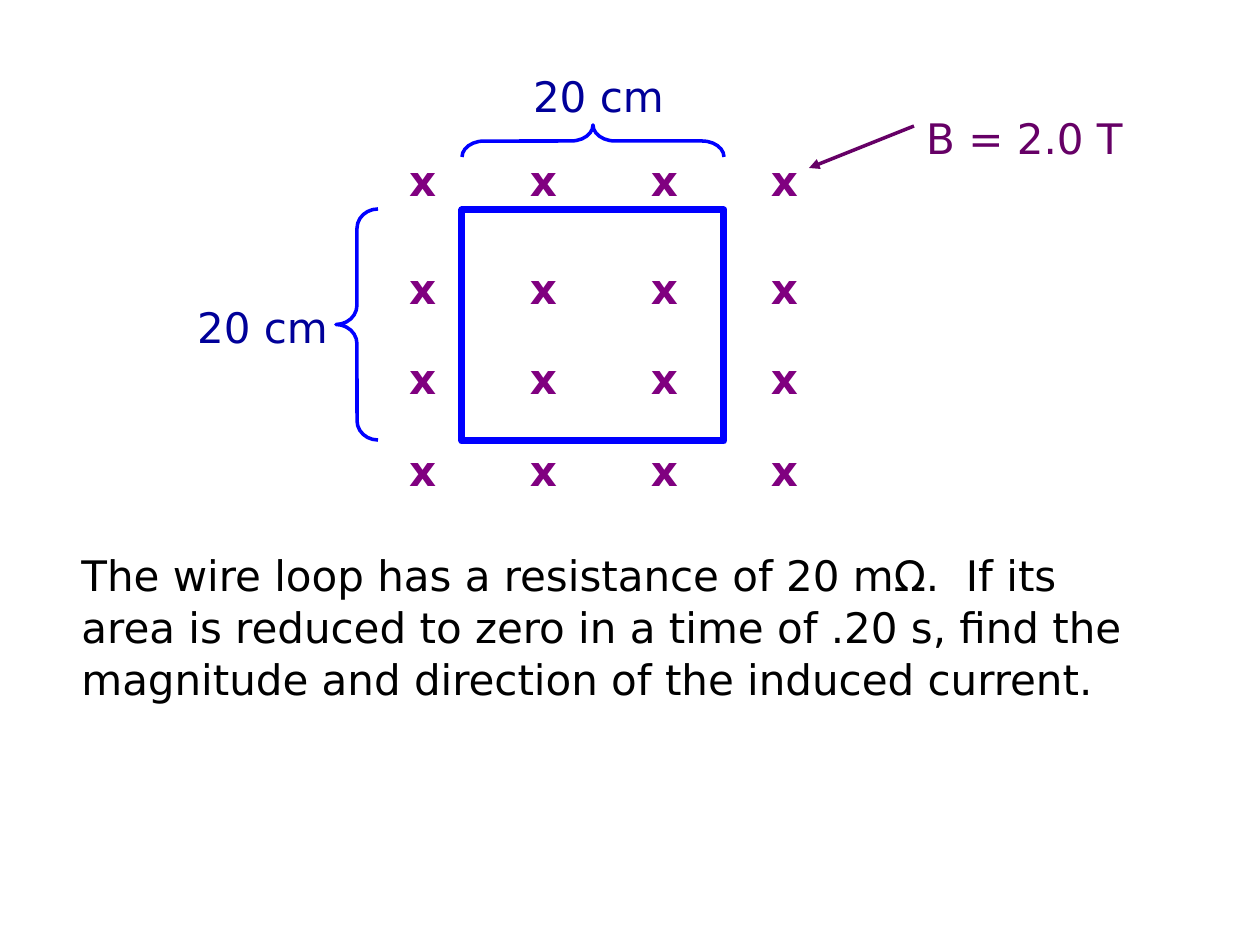
"""Build a slide posing an induced-current problem about a square wire loop in a magnetic field."""
from dataclasses import dataclass

from lxml import etree
from pptx import Presentation
from pptx.dml.color import RGBColor
from pptx.enum.shapes import MSO_CONNECTOR, MSO_SHAPE
from pptx.enum.text import PP_ALIGN
from pptx.oxml.ns import qn
from pptx.util import Pt

STRAIGHT = MSO_CONNECTOR.STRAIGHT
RECTANGLE = MSO_SHAPE.RECTANGLE
LEFT_BRACE = MSO_SHAPE.LEFT_BRACE
LEFT = PP_ALIGN.LEFT
CENTER = PP_ALIGN.CENTER


@dataclass(frozen=True)
class Theme:
    font: str = "DejaVu Sans"
    size: int = 24
    line_spacing: float = 1.03
    field: str = "800080"
    field_label: str = "660066"
    loop: str = "0000FF"
    length_label: str = "000099"
    question: str = "000000"
    loop_width: int = 4
    thin_width: int = 2


THEME = Theme()
EMU_PER_PX = 914400 / 126
SLIDE_SIZE = (1260, 945)

FIELD_MARK = "x"
FIELD_COLUMNS = (388, 509, 630, 750)
FIELD_ROWS = (147, 255, 345, 437)
FIELD_MARK_SIZE = (69, 63)

LOOP = (462, 210, 262, 231)
BRACES = [
    {"frame": (336, 209, 42, 231), "curve": 0.46, "rotation": 0},
    {"frame": (577, 10, 32, 262), "curve": 0.69, "rotation": 90},
]
FIELD_ARROW = (914, 126, 809, 168)

LABELS = [
    ("B = 2.0 T", (872, 105, 305, 63), THEME.field_label, CENTER),
    ("20 cm", (168, 294, 189, 63), THEME.length_label, CENTER),
    ("20 cm", (504, 63, 189, 63), THEME.length_label, CENTER),
    (
        "The wire loop has a resistance of 20 mΩ.  If its area is reduced to zero "
        "in a time of .20 s, find the magnitude and direction of the induced current.",
        (69, 542, 1092, 165), THEME.question, LEFT,
    ),
]


def emu(*lengths):
    return [round(length * EMU_PER_PX) for length in lengths]


def add_text(shapes, text, frame, color, align=CENTER, bold=False):
    box = shapes.add_textbox(*emu(*frame))
    box.text_frame.word_wrap = True
    para = box.text_frame.paragraphs[0]
    para.alignment = align
    para.line_spacing = THEME.line_spacing
    span = para.add_run()
    span.text = text
    span.font.name = THEME.font
    span.font.size = Pt(THEME.size)
    span.font.bold = bold
    span.font.color.rgb = RGBColor.from_string(color)


def style_line(line, color, width):
    line.color.rgb = RGBColor.from_string(color)
    line.width = Pt(width)


def add_outline(shapes, kind, frame, width, rotation=0):
    shape = shapes.add_shape(kind, *emu(*frame))
    shape.shadow.inherit = False
    shape.fill.background()
    shape.rotation = rotation
    style_line(shape.line, THEME.loop, width)
    return shape


def add_arrow(shapes, ends):
    arrow = shapes.add_connector(STRAIGHT, *emu(*ends))
    style_line(arrow.line, THEME.field_label, THEME.thin_width)
    properties = arrow.element.spPr
    etree.SubElement(properties.find(qn("a:ln")), qn("a:tailEnd"), type="triangle")
    etree.SubElement(properties, qn("a:effectLst"))


def main():
    deck = Presentation()
    deck.slide_width, deck.slide_height = emu(*SLIDE_SIZE)
    page = deck.slides.add_slide(deck.slide_layouts[6])

    field = page.shapes.add_group_shape()
    for top in FIELD_ROWS:
        for left in FIELD_COLUMNS:
            frame = (left, top, *FIELD_MARK_SIZE)
            add_text(field.shapes, FIELD_MARK, frame, THEME.field, bold=True)

    add_outline(page.shapes, RECTANGLE, LOOP, THEME.loop_width)
    for brace in BRACES:
        shape = add_outline(
            page.shapes, LEFT_BRACE, brace["frame"], THEME.thin_width, brace["rotation"]
        )
        shape.adjustments[0] = brace["curve"]
    add_arrow(page.shapes, FIELD_ARROW)

    for text, frame, color, align in LABELS:
        add_text(page.shapes, text, frame, color, align=align)

    deck.save("out.pptx")


if __name__ == "__main__":
    main()
